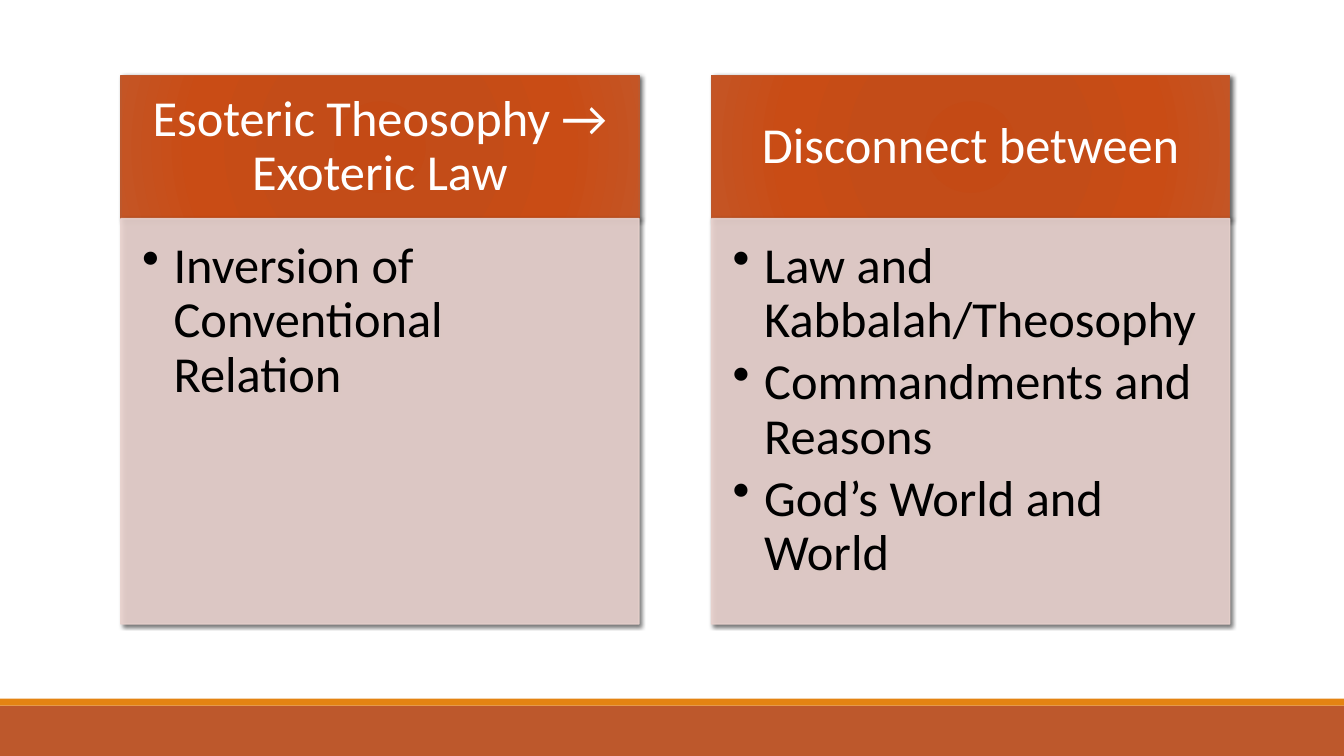
from lxml import etree
from pptx import Presentation
from pptx.dml.color import RGBColor
from pptx.enum.shapes import MSO_SHAPE
from pptx.enum.text import MSO_ANCHOR, PP_ALIGN
from pptx.oxml import parse_xml
from pptx.oxml.ns import qn
from pptx.util import Pt

RECT = MSO_SHAPE.RECTANGLE
TOP, MIDDLE = MSO_ANCHOR.TOP, MSO_ANCHOR.MIDDLE
LEFT, CENTER = PP_ALIGN.LEFT, PP_ALIGN.CENTER
A_NS = "http://schemas.openxmlformats.org/drawingml/2006/main"

COLUMNS = [
    ("Esoteric Theosophy → Exoteric Law", ["Inversion of Conventional Relation"]),
    ("Disconnect between", ["Law and Kabbalah/Theosophy",
                            "Commandments and Reasons",
                            "God’s World and World"]),
]
THEME = {
    "font": "Calibri", "size": 36,
    "heading_text": "FFFFFF", "body_text": "000000",
    "heading": "BD582C", "body": "E8D1CD", "body_alpha": 90,
    "gradient": [(0, "C44A15"), (34, "C34C18"), (70, "C94C15"), (100, "C45525")],
    "footer": "BD582C", "stripe": "E48312",
    "shadow": "000000", "shadow_alpha": 60,
}
SLIDE_W, SLIDE_H = 960, 540
FOOTER_H, STRIPE_H = 36, 5
COL_X, COL_Y, COL_W, COL_STEP = 86.4, 54, 370.1, 421.9
HEADING_H, BODY_H = 102.2, 289.6
HEADING_INSETS = (20.16, 11.52, 20.16, 11.52)
BODY_INSETS = (15.12, 15.12, 20.16, 22.68)
BULLET_INDENT, BULLET_GAP = 22.5, 5.4


def add_rect(s, x, y, w, h, color):
    sp = s.shapes.add_shape(RECT, Pt(x), Pt(y), Pt(w), Pt(h))
    sp.shadow.inherit = False
    sp.fill.solid()
    sp.fill.fore_color.rgb = RGBColor.from_string(color)
    sp.line.fill.background()
    return sp


def set_alpha(parent, percent):
    etree.SubElement(parent, qn("a:alpha")).set("val", str(percent * 1000))


def add_panel(s, x, y, w, h, color, blur):
    sp = add_rect(s, x, y, w, h, color)
    sp.line.color.rgb = RGBColor.from_string(color)
    sp.line.width = Pt(1)
    effects = sp._element.spPr.find(qn("a:effectLst"))
    shadow = etree.SubElement(effects, qn("a:outerShdw"), blurRad=str(Pt(blur)),
                              dist=str(Pt(2)), dir=str(45 * 60000),
                              algn="tl", rotWithShape="0")
    tint = etree.SubElement(shadow, qn("a:srgbClr"), val=THEME["shadow"])
    set_alpha(tint, THEME["shadow_alpha"])
    return sp


def set_radial_fill(sp):
    stops = "".join(f'<a:gs pos="{pos * 1000}"><a:srgbClr val="{color}"/></a:gs>'
                    for pos, color in THEME["gradient"])
    spPr = sp._element.spPr
    spPr.replace(spPr.find(qn("a:solidFill")), parse_xml(
        f'<a:gradFill xmlns:a="{A_NS}" rotWithShape="1"><a:gsLst>{stops}</a:gsLst>'
        '<a:path path="circle"><a:fillToRect l="100000" t="100000" '
        'r="100000" b="100000"/></a:path></a:gradFill>'))


def write_text(sp, lines, color, anchor, align, insets):
    tf = sp.text_frame
    tf.word_wrap = True
    tf.vertical_anchor = anchor
    tf.margin_left, tf.margin_top, tf.margin_right, tf.margin_bottom = map(Pt, insets)
    for i, line in enumerate(lines):
        p = tf.add_paragraph() if i else tf.paragraphs[0]
        p.text = line
        p.alignment = align
        p.line_spacing = 0.9
        p.font.name = THEME["font"]
        p.font.size = Pt(THEME["size"])
        p.font.color.rgb = RGBColor.from_string(color)
    return tf


def add_bullets(tf):
    for p in tf.paragraphs:
        p.space_after = Pt(BULLET_GAP)
        pPr = p._p.get_or_add_pPr()
        pPr.set("marL", str(Pt(BULLET_INDENT)))
        pPr.set("indent", str(-Pt(BULLET_INDENT)))
        bullet = etree.Element(qn("a:buChar"), char="•")
        pPr.find(qn("a:defRPr")).addprevious(bullet)


def add_column(s, x, heading, points):
    sp = add_panel(s, x, COL_Y, COL_W, HEADING_H, THEME["heading"], 3.5)
    set_radial_fill(sp)
    write_text(sp, [heading], THEME["heading_text"], MIDDLE, CENTER, HEADING_INSETS)

    sp = add_panel(s, x, COL_Y + HEADING_H, COL_W, BODY_H, THEME["body"], 3)
    for color in sp._element.spPr.findall(".//" + qn("a:solidFill") + "/" + qn("a:srgbClr")):
        set_alpha(color, THEME["body_alpha"])
    add_bullets(write_text(sp, points, THEME["body_text"], TOP, LEFT, BODY_INSETS))


def main():
    prs = Presentation()
    prs.slide_width, prs.slide_height = Pt(SLIDE_W), Pt(SLIDE_H)
    s = prs.slides.add_slide(prs.slide_layouts[6])
    footer_y = SLIDE_H - FOOTER_H
    add_rect(s, 0, footer_y, SLIDE_W, FOOTER_H, THEME["footer"])
    add_rect(s, 0, footer_y - STRIPE_H, SLIDE_W, STRIPE_H, THEME["stripe"])
    for i, (heading, points) in enumerate(COLUMNS):
        add_column(s, COL_X + i * COL_STEP, heading, points)
    prs.save("out.pptx")


if __name__ == "__main__":
    main()
